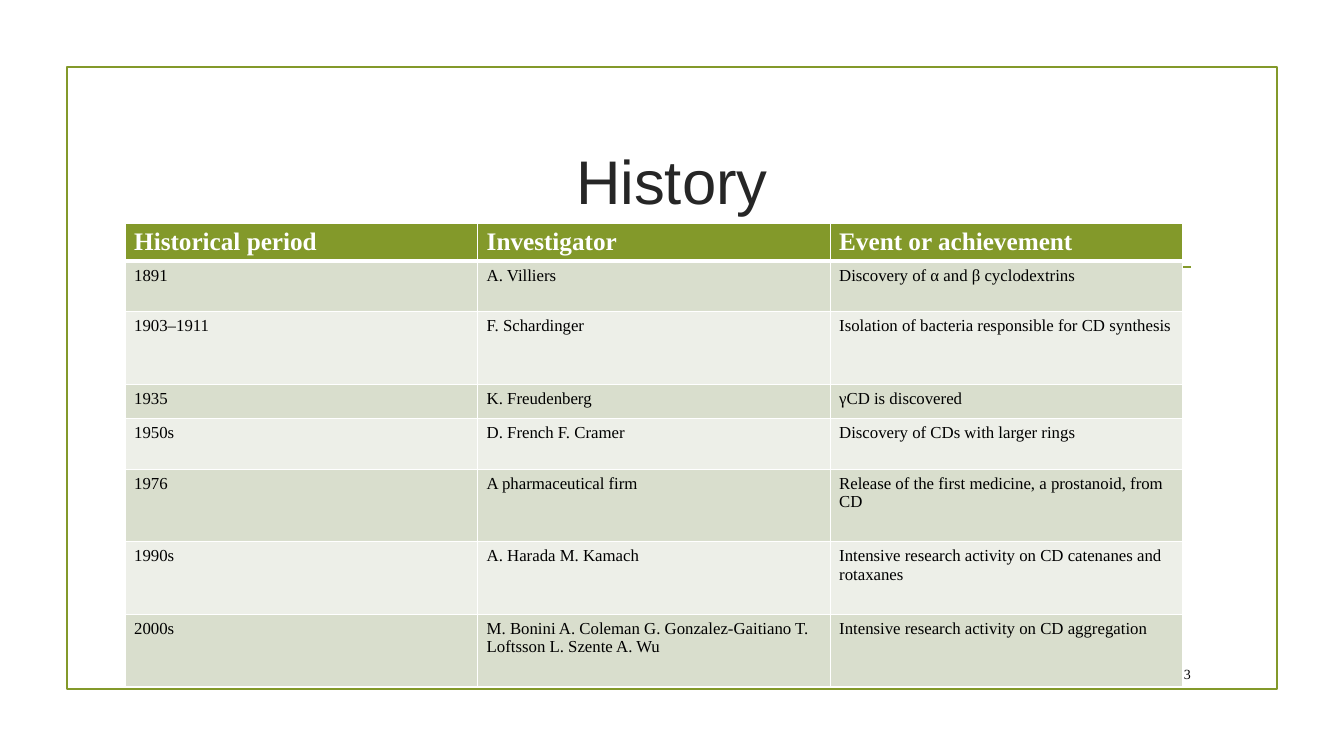
from dataclasses import dataclass

from lxml.etree import SubElement
from pptx import Presentation
from pptx.dml.color import RGBColor
from pptx.enum.shapes import MSO_CONNECTOR, MSO_SHAPE
from pptx.enum.text import MSO_ANCHOR, PP_ALIGN
from pptx.oxml.ns import qn
from pptx.util import Inches, Pt

# The page is a grid of 160 columns by 90 rows
WIDTH, HEIGHT = Inches(13.33), Inches(7.5)
COLUMNS, ROWS = 160, 90

COLORS = {
    "green": "83992A",
    "title": "262626",
    "text": "000000",
    "white": "FFFFFF",
    "dark band": "D9DECD",
    "light band": "EDEFE8",
}
HEADINGS = ("Historical period", "Investigator", "Event or achievement")


@dataclass(frozen=True)
class Box:
    left: float
    top: float
    width: float
    height: float

    def lengths(self) -> tuple[int, int, int, int]:
        return across(self.left), down(self.top), across(self.width), down(self.height)


@dataclass(frozen=True)
class Milestone:
    period: str
    investigator: str
    event: str
    rows: float


@dataclass(frozen=True)
class CellStyle:
    size: int
    color: str
    fill: str
    bold: bool = False
    top: float = 1
    bottom: float = 1


MILESTONES = (
    Milestone("1891", "A. Villiers", "Discovery of α and β cyclodextrins", 6.05),
    Milestone("1903–1911", "F. Schardinger",
              "Isolation of bacteria responsible for CD synthesis", 8.64),
    Milestone("1935", "K. Freudenberg", "γCD is discovered", 4.05),
    Milestone("1950s", "D. French F. Cramer", "Discovery of CDs with larger rings", 6.05),
    Milestone("1976", "A pharmaceutical firm",
              "Release of the first medicine, a prostanoid, from CD", 8.64),
    Milestone("1990s", "A. Harada M. Kamach",
              "Intensive research activity on CD catenanes and rotaxanes", 8.64),
    Milestone("2000s", "M. Bonini A. Coleman G. Gonzalez-Gaitiano T. Loftsson L. Szente A. Wu",
              "Intensive research activity on CD aggregation", 8.64),
)
HEADER_ROWS = 4.4
FRAME = Box(8, 8, 144, 74)
TITLE = Box(17, 12.84, 126, 17.16)
TABLE = Box(14.9, 26.55, 125.9, HEADER_ROWS + sum(item.rows for item in MILESTONES))
NUMBER = Box(135.84, 78.36, 7.1, 3.72)


def across(columns: float) -> int:
    return round(WIDTH * columns / COLUMNS)


def down(rows: float) -> int:
    return round(HEIGHT * rows / ROWS)


def color(name: str) -> RGBColor:
    return RGBColor.from_string(COLORS[name])


def style_font(para, name: str, size: int, color_name: str, bold: bool = False) -> None:
    font = para.font
    font.name, font.size, font.bold = name, Pt(size), bold
    font.color.rgb = color(color_name)


def style_line(line) -> None:
    line.color.rgb = color("green")
    line.width = Pt(1.25)


def add_border(cell, side: str, width: float) -> None:
    border = SubElement(cell._tc.get_or_add_tcPr(), qn(f"a:{side}"), w=str(Pt(width)))
    fill = SubElement(border, qn("a:solidFill"))
    SubElement(fill, qn("a:srgbClr"), val=COLORS["white"])


def fill_cell(cell, text: str, style: CellStyle) -> None:
    cell.text = text
    style_font(cell.text_frame.paragraphs[0], "Times New Roman",
               style.size, style.color, style.bold)
    cell.margin_left = cell.margin_right = Inches(0.09)
    cell.margin_top = cell.margin_bottom = Inches(0.05)
    # Borders come before the fill in the cell properties
    for side, width in (("lnL", 1), ("lnR", 1), ("lnT", style.top), ("lnB", style.bottom)):
        add_border(cell, side, width)
    cell.fill.solid()
    cell.fill.fore_color.rgb = color(style.fill)


def add_frame(page) -> None:
    frame = page.shapes.add_shape(MSO_SHAPE.RECTANGLE, *FRAME.lengths())
    frame.shadow.inherit = False
    frame.fill.background()
    style_line(frame.line)

    rule = page.shapes.add_connector(MSO_CONNECTOR.STRAIGHT, across(18.4), down(31.8),
                                     across(141.75), down(31.8))
    style_line(rule.line)
    SubElement(rule._element.spPr, qn("a:effectLst"))


def set_title(page) -> None:
    title = page.shapes.title
    title.left, title.top, title.width, title.height = TITLE.lengths()
    title.text_frame.text = "History"
    title.text_frame.vertical_anchor = MSO_ANCHOR.MIDDLE
    para = title.text_frame.paragraphs[0]
    para.alignment = PP_ALIGN.CENTER
    style_font(para, "Arial", 44, "title")


def add_history(page) -> None:
    table = page.shapes.add_table(len(MILESTONES) + 1, len(HEADINGS), *TABLE.lengths()).table
    for column in table.columns:
        column.width = across(TABLE.width / len(HEADINGS))

    # Header
    table.rows[0].height = down(HEADER_ROWS)
    header = CellStyle(18, "white", "green", bold=True, bottom=3)
    for cell, heading in zip(table.rows[0].cells, HEADINGS):
        fill_cell(cell, heading, header)

    # Banded body
    for index, item in enumerate(MILESTONES, start=1):
        row = table.rows[index]
        row.height = down(item.rows)
        band = "dark band" if index % 2 else "light band"
        style = CellStyle(12, "text", band, top=3 if index == 1 else 1)
        for cell, text in zip(row.cells, (item.period, item.investigator, item.event)):
            fill_cell(cell, text, style)


def add_page_number(page) -> None:
    frame = page.shapes.add_textbox(*NUMBER.lengths()).text_frame
    frame.word_wrap = True
    frame.vertical_anchor = MSO_ANCHOR.MIDDLE
    frame.text = "3"
    para = frame.paragraphs[0]
    para.alignment = PP_ALIGN.RIGHT
    style_font(para, "Times New Roman", 10, "text")


def main() -> None:
    deck = Presentation()
    deck.slide_width, deck.slide_height = WIDTH, HEIGHT
    page = deck.slides.add_slide(deck.slide_layouts[5])
    add_frame(page)
    set_title(page)
    add_history(page)
    add_page_number(page)
    deck.save("out.pptx")


if __name__ == "__main__":
    main()
